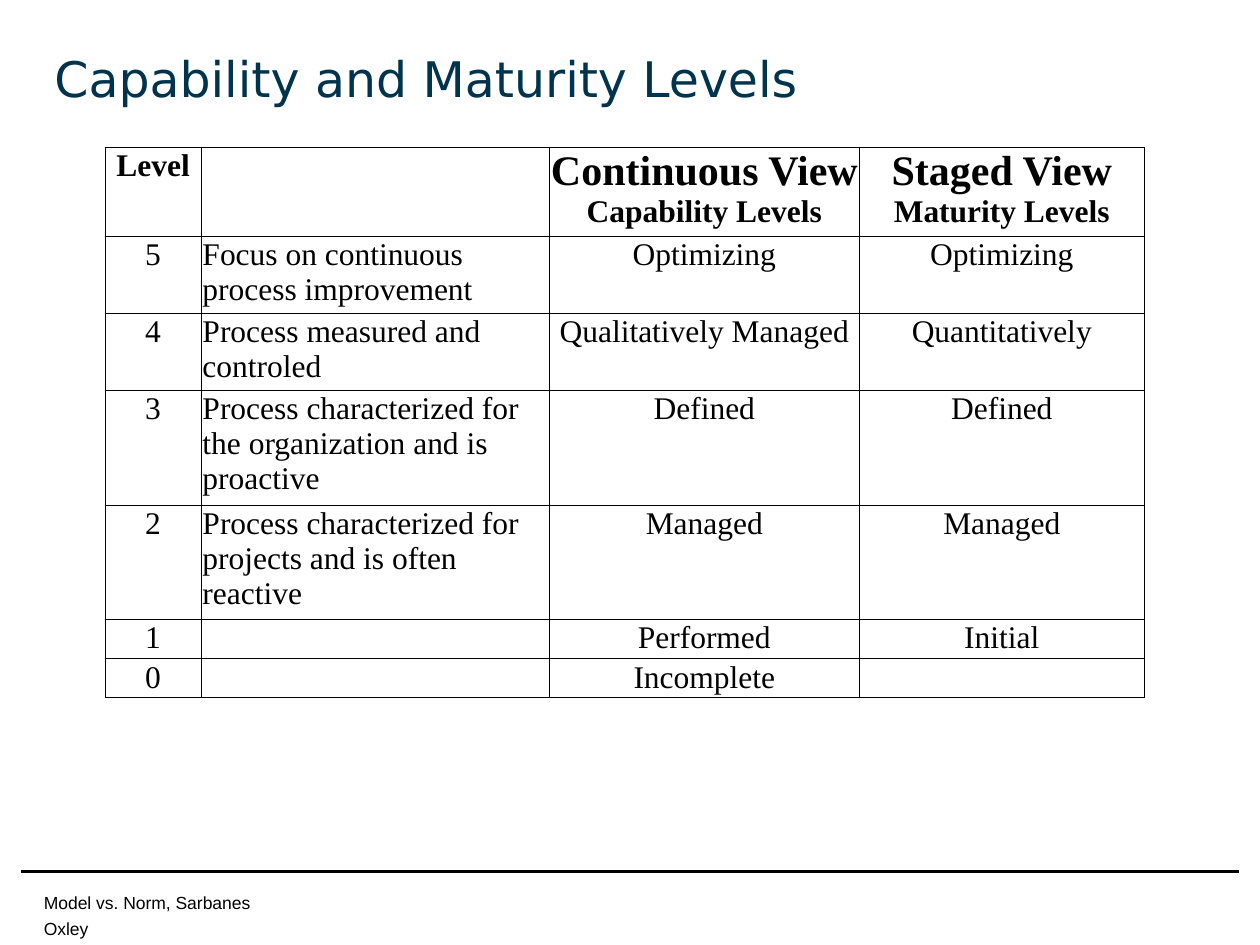
from pptx import Presentation
from pptx.util import Pt
from pptx.dml.color import RGBColor as RGB
from pptx.enum.shapes import MSO_CONNECTOR as Line
from pptx.enum.text import MSO_AUTO_SIZE as Fit, PP_ALIGN as Align
from pptx.oxml import parse_xml
from pptx.oxml.ns import nsdecls
from lxml.etree import SubElement

COLORS = {"title": "00344D", "ink": "000000", "paper": "FFFFFF"}
SERIF = "Times New Roman"

TITLE = "Capability and Maturity Levels"
FOOTER = [("Model vs. Norm, Sarbanes", 10, "ink"),
          (" ", 24, "paper"),
          ("Oxley", 10, "ink")]

HEAD = ["Level", "", "Continuous View\nCapability Levels",
        "Staged View\nMaturity Levels"]
ROWS = [
    ["5", "Focus on continuous process improvement", "Optimizing", "Optimizing"],
    ["4", "Process measured and controled", "Qualitatively Managed",
     "Quantitatively"],
    ["3", "Process characterized for the organization and is proactive",
     "Defined", "Defined"],
    ["2", "Process characterized for projects and is often reactive",
     "Managed", "Managed"],
    ["1", "", "Performed", "Initial"],
    ["0", "", "Incomplete", ""],
]
WIDTHS = [55, 199, 177, 163]
HEIGHTS = [51, 43.6, 43.6, 65.5, 65.5, 22.2, 22.2]


def style(run, font, size, color, bold=False):
    run.font.name = font
    run.font.size = Pt(size)
    run.font.bold = bold
    run.font.color.rgb = RGB.from_string(COLORS[color])


def add_text(slide, box, parts, font):
    """Add one line of text from (text, size, color) parts."""
    frame = slide.shapes.add_textbox(*map(Pt, box)).text_frame
    frame.word_wrap = False
    frame.auto_size = Fit.SHAPE_TO_FIT_TEXT
    for text, size, color in parts:
        run = frame.paragraphs[0].add_run()
        run.text = text
        style(run, font, size, color)


def add_borders(cell):
    props = cell._tc.get_or_add_tcPr()
    for i, side in enumerate(("lnL", "lnR", "lnT", "lnB")):
        props.insert(i, parse_xml(
            f'<a:{side} {nsdecls("a")} w="{Pt(0.5)}"><a:solidFill>'
            f'<a:srgbClr val="{COLORS["ink"]}"/></a:solidFill></a:{side}>'))


def fill_cell(cell, text, head, align):
    cell.fill.background()
    cell.margin_left = cell.margin_right = cell.margin_top = Pt(0.72)
    cell.margin_bottom = 0
    add_borders(cell)
    cell.text_frame.text = text
    paras = cell.text_frame.paragraphs
    for i, para in enumerate(paras):
        para.alignment = align
        size = 24 if len(paras) > 1 and i == 0 else 18
        for run in para.runs:
            style(run, SERIF, size, "ink", head)


def add_levels(slide):
    grid = [HEAD] + ROWS
    table = slide.shapes.add_table(
        len(grid), len(HEAD), Pt(60), Pt(84),
        Pt(sum(WIDTHS)), Pt(sum(HEIGHTS))).table
    table.first_row = table.horz_banding = False
    for col, width in zip(table.columns, WIDTHS):
        col.width = Pt(width)
    for r, (row, high) in enumerate(zip(grid, HEIGHTS)):
        table.rows[r].height = Pt(high)
        for c, text in enumerate(row):
            align = Align.LEFT if c == 1 else Align.CENTER
            fill_cell(table.cell(r, c), text, r == 0, align)


def add_rule(slide):
    rule = slide.shapes.add_connector(
        Line.STRAIGHT, Pt(12), Pt(498), Pt(708), Pt(498))
    rule.line.color.rgb = RGB.from_string(COLORS["ink"])
    rule.line.width = Pt(1.25)
    SubElement(rule._element.spPr,
               "{http://schemas.openxmlformats.org/drawingml/2006/main}effectLst")


def main():
    deck = Presentation()
    deck.slide_width, deck.slide_height = Pt(720), Pt(540)
    slide = deck.slides.add_slide(deck.slide_layouts[6])
    add_text(slide, (18, 492.4, 158, 36), FOOTER, "Arial")
    add_rule(slide)
    add_levels(slide)
    add_text(slide, (24, 24, 443, 41), [(TITLE, 28, "title")], "DejaVu Sans")
    deck.save("out.pptx")


if __name__ == "__main__":
    main()
